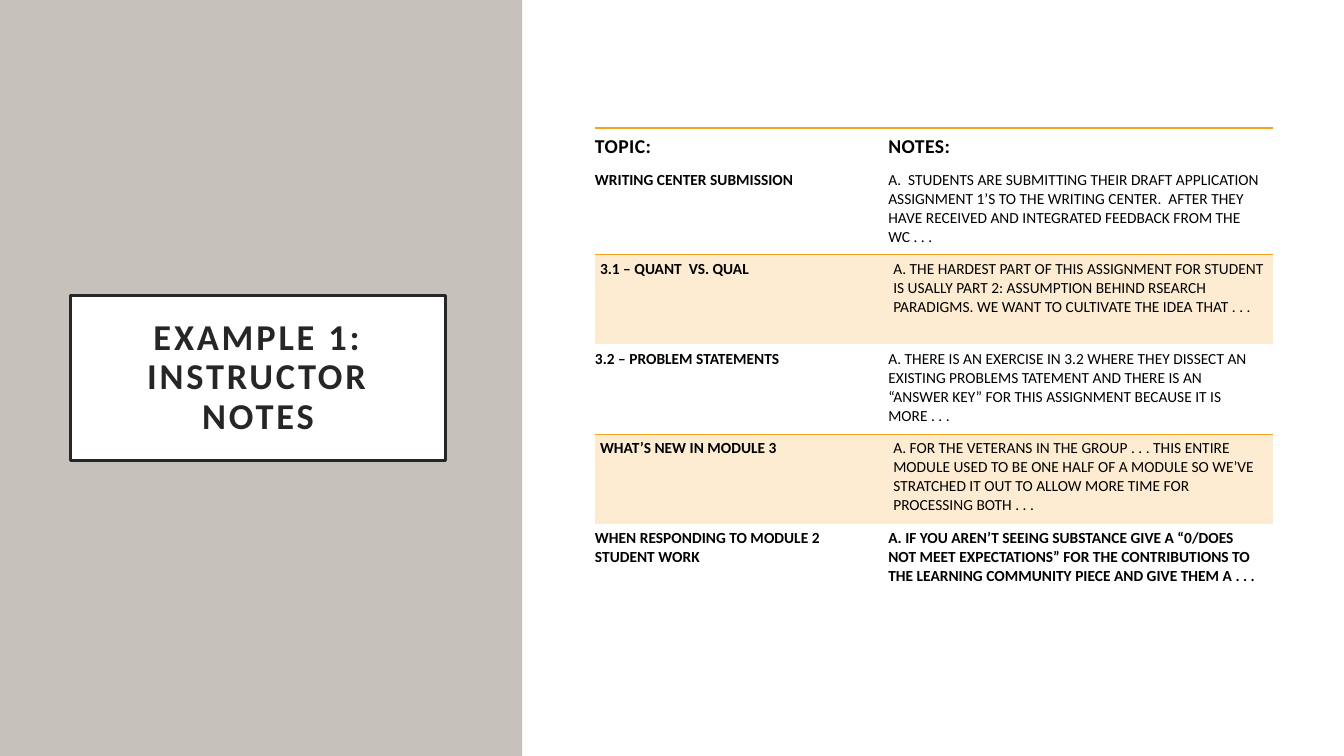
import pptx
import pptx.dml.color
import pptx.enum.shapes
import pptx.enum.text
import pptx.oxml
import pptx.oxml.ns
import pptx.util
from dataclasses import dataclass

Pt = pptx.util.Pt
Align = pptx.enum.text.PP_ALIGN
Anchor = pptx.enum.text.MSO_ANCHOR


@dataclass(frozen=True)
class Theme:
    font: str = "Calibri"
    paper: str = "FFFFFF"
    panel: str = "C6C1BA"
    ink: str = "262626"
    text: str = "000000"
    accent: str = "F6A21D"
    band: str = "FDECD2"
    title_size: float = 26
    head_size: float = 14
    body_size: float = 11


HEADINGS = ("TOPIC:", "NOTES:")
NOTES = [
    ("WRITING CENTER SUBMISSION",
     "A.  STUDENTS ARE SUBMITTING THEIR DRAFT APPLICATION ASSIGNMENT 1’S TO THE WRITING CENTER.  "
     "AFTER THEY HAVE RECEIVED AND INTEGRATED FEEDBACK FROM THE WC . . ."),
    ("3.1 – QUANT  VS. QUAL",
     "A. THE HARDEST PART OF THIS ASSIGNMENT FOR STUDENT IS USALLY PART 2: ASSUMPTION BEHIND "
     "RSEARCH PARADIGMS. WE WANT TO CULTIVATE THE IDEA THAT . . ."),
    ("3.2 – PROBLEM STATEMENTS",
     "A. THERE IS AN EXERCISE IN 3.2 WHERE THEY DISSECT AN EXISTING PROBLEMS TATEMENT AND THERE "
     "IS AN “ANSWER KEY” FOR THIS ASSIGNMENT BECAUSE IT IS MORE . . ."),
    ("WHAT’S NEW IN MODULE 3",
     "A. FOR THE VETERANS IN THE GROUP . . . THIS ENTIRE MODULE USED TO BE ONE HALF OF A MODULE "
     "SO WE’VE STRATCHED IT OUT TO ALLOW MORE TIME FOR PROCESSING BOTH . . ."),
    ("WHEN RESPONDING TO MODULE 2 STUDENT WORK",
     "A. IF YOU AREN’T SEEING SUBSTANCE GIVE A “0/DOES NOT MEET EXPECTATIONS” FOR THE "
     "CONTRIBUTIONS TO THE LEARNING COMMUNITY PIECE AND GIVE THEM A . . ."),
]


def rgb(color):
    """Turn a hex string into a colour."""
    return pptx.dml.color.RGBColor.from_string(color)


def apply(target, values):
    """Set attributes of the target from a dict."""
    for name, value in values.items():
        setattr(target, name, value)


class SlideBuilder:
    """Draw elements on one page in one theme."""

    def __init__(self, page, theme):
        """Keep the page and the theme."""
        self.page, self.theme = page, theme

    def rect(self, left, top, width, height, fill, line=None):
        """Add a rectangle, outlined if a line colour is given."""
        box = self.page.shapes.add_shape(
            pptx.enum.shapes.MSO_SHAPE.RECTANGLE, Pt(left), Pt(top), Pt(width), Pt(height))
        box.shadow.inherit = False
        box.fill.solid()
        box.fill.fore_color.rgb = rgb(fill)
        if line:
            box.line.color.rgb = rgb(line)
            box.line.width = Pt(2.5)
        else:
            box.line.fill.background()
        return box

    def add_span(self, para, text, size, color, bold, spacing=0):
        """Add one formatted span to a paragraph."""
        span = para.add_run()
        span.text = text
        apply(span.font, {"name": self.theme.font, "size": Pt(size), "bold": bold})
        span.font.color.rgb = rgb(color)
        if spacing:
            span._r.get_or_add_rPr().set("spc", str(round(spacing * 100)))

    def title(self, text, left, top, width, height):
        """Add the framed title."""
        theme = self.theme
        box = self.rect(left, top, width, height, theme.paper, theme.ink)
        margins = {f"margin_{side}": Pt(14.4) for side in ("left", "top", "right", "bottom")}
        apply(box.text_frame, {"word_wrap": True, "vertical_anchor": Anchor.MIDDLE, **margins})
        para = box.text_frame.paragraphs[0]
        apply(para, {"alignment": Align.CENTER, "line_spacing": 0.9})
        self.add_span(para, text, theme.title_size, theme.ink, True, 2)

    def border(self, cell, side, width):
        """Set one cell border; zero width hides it."""
        tag = f"a:ln{side}"
        line = pptx.oxml.parse_xml(f'<{tag} {pptx.oxml.ns.nsdecls("a")} w="{int(Pt(width))}"/>')
        paint = pptx.oxml.ns.qn("a:solidFill" if width else "a:noFill")
        fill = line.makeelement(paint, {})
        line.append(fill)
        if width:
            fill.append(fill.makeelement(pptx.oxml.ns.qn("a:srgbClr"), {"val": self.theme.accent}))
        cell._tc.get_or_add_tcPr().append(line)

    def cell(self, cell, text, size, bold, spacing, fill, borders, margins, anchor):
        """Fill and format one table cell."""
        for side, width in borders.items():
            self.border(cell, side, width)
        if fill:
            cell.fill.solid()
            cell.fill.fore_color.rgb = rgb(fill)
        else:
            cell.fill.background()
        left, right = margins
        apply(cell, {"margin_left": Pt(left), "margin_right": Pt(right), "margin_top": Pt(3.6),
                     "margin_bottom": Pt(3.6), "vertical_anchor": anchor})
        self.add_span(cell.text_frame.paragraphs[0], text, size, self.theme.text, bold, spacing)

    def table(self, rows, left, top, widths, heights):
        """Add the notes table with every second body row banded."""
        theme = self.theme
        table = self.page.shapes.add_table(
            len(rows), len(widths), Pt(left), Pt(top), Pt(sum(widths)), Pt(sum(heights))).table
        apply(table, {"first_row": False, "horz_banding": False})
        for column, width in zip(table.columns, widths):
            column.width = Pt(width)
        for row, height in zip(table.rows, heights):
            row.height = Pt(height)
        banded = [index > 0 and index % 2 == 0 for index in range(len(rows))]
        rules = [1.5] + [0.75 if band else 0 for band in banded[1:]] + [0]
        for r, texts in enumerate(rows):
            head, last = r == 0, r == len(rows) - 1
            for c, text in enumerate(texts):
                self.cell(
                    table.cell(r, c), text,
                    size=theme.head_size if head else theme.body_size,
                    bold=head or last or c == 0,
                    spacing=0.3 if head else 0,
                    fill=theme.band if banded[r] else None,
                    borders={"L": 0, "R": 0, "T": rules[r], "B": rules[r + 1]},
                    margins=(3.6 if banded[r] else 0, 0.7 if head else 6.5),
                    anchor=Anchor.MIDDLE if head else Anchor.TOP)


def main():
    """Build and save the deck."""
    deck = pptx.Presentation()
    apply(deck, {"slide_width": Pt(960), "slide_height": Pt(540)})
    theme = Theme()
    builder = SlideBuilder(deck.slides.add_slide(deck.slide_layouts[6]), theme)
    builder.rect(0, 0, 373, 540, theme.panel)
    builder.title("EXAMPLE 1: INSTRUCTOR NOTES", 50.4, 211, 268, 118)
    builder.rect(374, 0, 586, 540, theme.paper)
    builder.table([HEADINGS, *NOTES], 425, 91.5, [209.5, 275], [26.6] + [64] * 4 + [50.4])
    deck.save("out.pptx")


if __name__ == "__main__":
    main()
